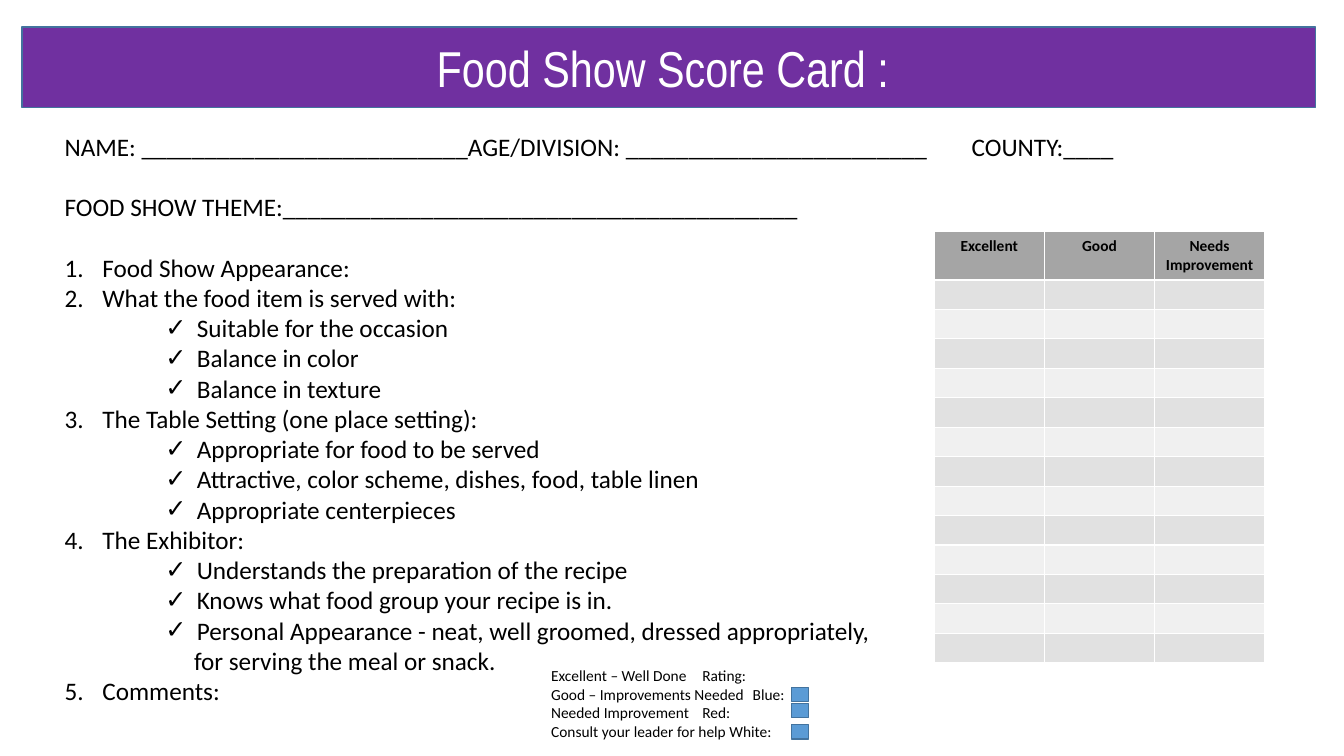
from lxml.etree import SubElement
from pptx import Presentation
from pptx.dml.color import RGBColor
from pptx.enum.shapes import MSO_SHAPE as Preset
from pptx.enum.text import MSO_ANCHOR as Anchor, MSO_AUTO_SIZE as AutoSize, PP_ALIGN as Align
from pptx.oxml.ns import qn
from pptx.util import Pt

COLORS = {
    "banner": "7030A0", "outline": "43739E", "swatch": "5B9BD5",
    "ink": "000000", "paper": "FFFFFF",
    "header": "A5A5A5", "odd": "E1E1E1", "even": "F0F0F0",
}
LINE_GAP = 21.6

ENTRY_LINES = [
    ("NAME: __________________________AGE/DIVISION: ________________________\tCOUNTY:____", 0),
    ("FOOD SHOW THEME:_________________________________________", LINE_GAP),
]
CRITERIA = [
    ("Food Show Appearance:", []),
    ("What the food item is served with:",
     ["Suitable for the occasion", "Balance in color", "Balance in texture"]),
    ("The Table Setting (one place setting):",
     ["Appropriate for food to be served",
      "Attractive, color scheme, dishes, food, table linen",
      "Appropriate centerpieces"]),
    ("The Exhibitor:",
     ["Understands the preparation of the recipe",
      "Knows what food group your recipe is in.",
      "Personal Appearance - neat, well groomed, dressed appropriately,"]),
]
LEGEND = [
    "Excellent – Well Done\tRating:",
    "Good – Improvements Needed\tBlue:",
    "Needed Improvement\tRed:",
    "Consult your leader for help White:",
]
RATINGS = ["Excellent", "Good", "Needs Improvement"]
SCORE_ROWS = 13
SWATCH_TOPS = [491, 502.6, 517.7]


class ScoreCard:
    font = "Calibri"

    def __init__(self, slide):
        self.slide = slide

    def color(self, key):
        return RGBColor.from_string(COLORS[key])

    def move(self, shape, left, top, width, height):
        shape.left, shape.top = Pt(left), Pt(top)
        shape.width, shape.height = Pt(width), Pt(height)

    def paint(self, shape, fill):
        shape.fill.solid()
        shape.fill.fore_color.rgb = self.color(fill)
        shape.line.color.rgb = self.color("outline")
        shape.line.width = Pt(1)

    def add_text(self, paragraph, text, size, color="ink", font=font, bold=False):
        run = paragraph.add_run()
        run.text = text
        run.font.size = Pt(size)
        run.font.name = font
        run.font.bold = bold
        run.font.color.rgb = self.color(color)

    def line(self, frame, text, size, before=0, level=0, margin=0, hang=0, bullet=None, tab=None):
        first = frame.paragraphs[0]
        paragraph = frame.add_paragraph() if first.runs else first
        paragraph.level = level
        paragraph.alignment = Align.LEFT
        paragraph.space_before = Pt(before)
        self.add_text(paragraph, text, size)
        props = paragraph._p.get_or_add_pPr()
        props.set("marL", str(Pt(margin)))
        props.set("indent", str(Pt(-hang)))
        if bullet == "number":
            SubElement(props, qn("a:buAutoNum"), type="arabicPeriod")
        elif bullet:
            SubElement(props, qn("a:buChar"), char=bullet)
        else:
            SubElement(props, qn("a:buNone"))
        if tab:
            stops = SubElement(props, qn("a:tabLst"))
            SubElement(stops, qn("a:tab"), pos=str(Pt(tab)), algn="l")

    def banner(self, text, *box):
        title = self.slide.shapes.title
        self.move(title, *box)
        self.paint(title, "banner")
        frame = title.text_frame
        frame.auto_size = AutoSize.NONE
        frame.vertical_anchor = Anchor.MIDDLE
        paragraph = frame.paragraphs[0]
        paragraph.alignment = Align.CENTER
        self.add_text(paragraph, text, 36, "paper", "Arial Narrow")

    def form(self, *box):
        body = self.slide.placeholders[1]
        self.move(body, *box)
        frame = body.text_frame
        frame.auto_size = AutoSize.NONE
        frame.vertical_anchor = Anchor.TOP
        for entry, before in ENTRY_LINES:
            self.line(frame, entry, 18, before, tab=648)
        numbered = {"margin": 27, "hang": 27, "bullet": "number"}
        for index, (criterion, checks) in enumerate(CRITERIA):
            self.line(frame, criterion, 18, 0 if index else LINE_GAP, **numbered)
            for check in checks:
                self.line(frame, check, 18, level=2, margin=94.5, hang=22.5, bullet="✓")
        self.line(frame, "for serving the meal or snack.", 18, level=2, margin=92.5)
        self.line(frame, "Comments:", 18, **numbered)

    def scores(self, left, top, width, header_height, row_height):
        height = header_height + SCORE_ROWS * row_height
        table = self.slide.shapes.add_table(
            SCORE_ROWS + 1, len(RATINGS), Pt(left), Pt(top), Pt(width), Pt(height)).table
        for index, row in enumerate(table.rows):
            row.height = Pt(row_height if index else header_height)
            band = ("odd" if index % 2 else "even") if index else "header"
            for cell, rating in zip(row.cells, RATINGS):
                cell.fill.solid()
                cell.fill.fore_color.rgb = self.color(band)
                paragraph = cell.text_frame.paragraphs[0]
                if index:
                    SubElement(paragraph._p, qn("a:endParaRPr"), sz="1100")
                else:
                    paragraph.alignment = Align.CENTER
                    self.add_text(paragraph, rating, 11, bold=True)

    def legend(self, left, top, width, height):
        box = self.slide.shapes.add_textbox(Pt(left), Pt(top), Pt(width), Pt(height))
        box.text_frame.word_wrap = True
        for entry in LEGEND:
            self.line(box.text_frame, entry, 11, tab=144)

    def swatch(self, left, top, width, height):
        square = self.slide.shapes.add_shape(
            Preset.RECTANGLE, Pt(left), Pt(top), Pt(width), Pt(height))
        square.shadow.inherit = False
        self.paint(square, "swatch")


def main():
    deck = Presentation()
    deck.slide_width, deck.slide_height = Pt(960), Pt(540)
    card = ScoreCard(deck.slides.add_slide(deck.slide_layouts[1]))
    card.banner("Food Show Score Card : ", 15.8, 19.4, 923.8, 57.6)
    card.form(38.9, 90, 900.7, 421.9)
    card.scores(667.4, 165.6, 236, 33.1, 21.05)
    card.legend(386.6, 472.3, 244.8, 60.5)
    for top in SWATCH_TOPS:
        card.swatch(565.2, top, 12.2, 10.1)
    deck.save("out.pptx")


if __name__ == "__main__":
    main()
